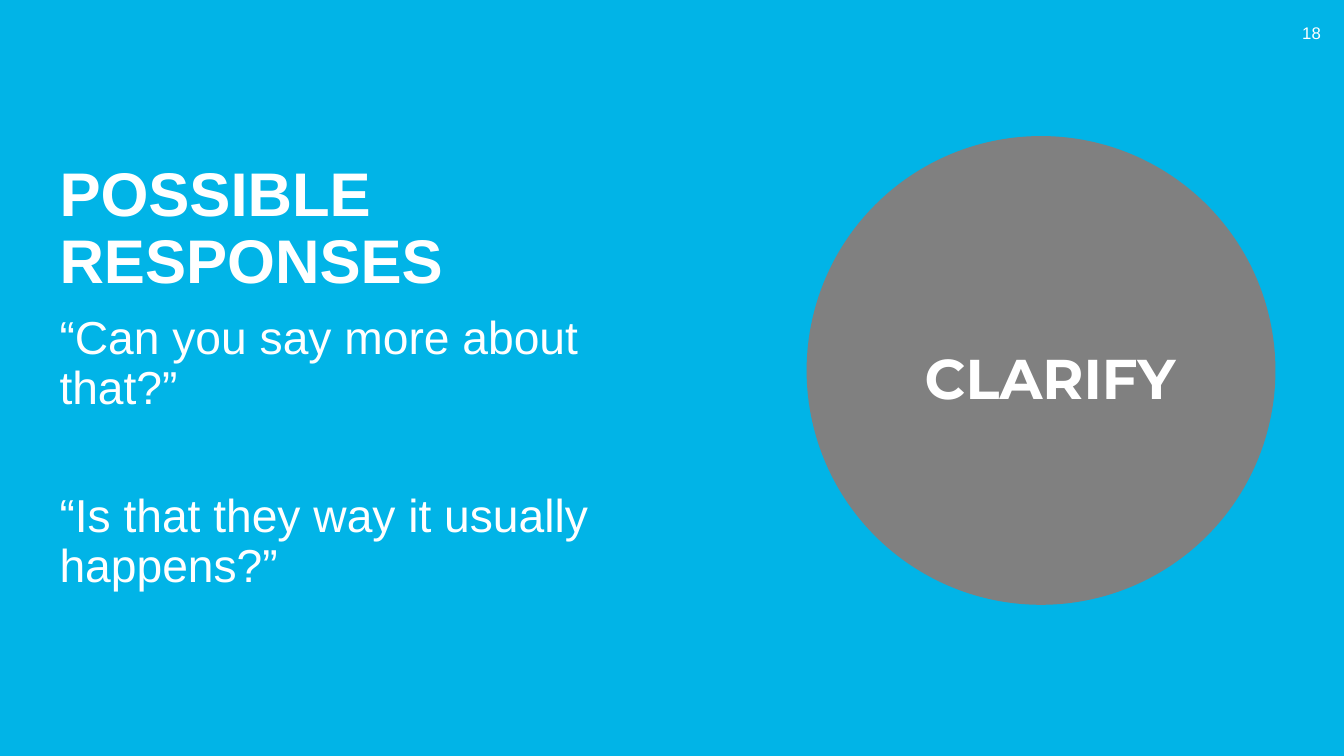
"""Build the "Possible responses" slide with its Clarify circle."""
from pptx import Presentation
from pptx.dml.color import RGBColor
from pptx.enum.shapes import MSO_SHAPE
from pptx.enum.text import MSO_ANCHOR, MSO_AUTO_SIZE, PP_ALIGN
from pptx.util import Inches, Pt

HEADING = ["POSSIBLE RESPONSES"]
RESPONSES = ["“Can you say more about that?”", "“Is that they way it usually happens?”"]
STRATEGY = ["CLARIFY"]
PAGE_NUMBER = ["18"]

SKY = RGBColor(0x01, 0xB4, 0xE7)
GRAY = RGBColor(0x80, 0x80, 0x80)
WHITE = RGBColor(0xFF, 0xFF, 0xFF)
RECTANGLE, OVAL = MSO_SHAPE.RECTANGLE, MSO_SHAPE.OVAL
LEFT, CENTER, RIGHT = PP_ALIGN.LEFT, PP_ALIGN.CENTER, PP_ALIGN.RIGHT
TOP, MIDDLE, BOTTOM = MSO_ANCHOR.TOP, MSO_ANCHOR.MIDDLE, MSO_ANCHOR.BOTTOM

SLIDE_W, SLIDE_H = 13.33, 7.5
MARGIN = 0.49
CIRCLE_LEFT, CIRCLE_TOP, CIRCLE_SIZE = 8, 1.35, 4.65
BACKDROP_BOX = (0, 0, SLIDE_W, SLIDE_H)
HEADING_BOX = (MARGIN, 1.75, 6.46, 1.24)
RESPONSES_BOX = (MARGIN, 3.07, 6.34, 3.04)
CIRCLE_BOX = (CIRCLE_LEFT, CIRCLE_TOP, CIRCLE_SIZE, CIRCLE_SIZE)
STRATEGY_BOX = (CIRCLE_LEFT + 0.09, 3.36, CIRCLE_SIZE, 0.77)
PAGE_BOX = (12.74, 0.13, 0.46, 0.4)


def write(holder, lines, box, size, font="Arial", bold=False, align=LEFT,
          anchor=TOP, leading=1.0, before=0, gap=0):
    """Place a text holder and fill it with formatted paragraphs."""
    holder.left, holder.top, holder.width, holder.height = map(Inches, box)
    frame = holder.text_frame
    frame.word_wrap = True
    frame.auto_size = MSO_AUTO_SIZE.NONE
    frame.vertical_anchor = anchor
    for index, line in enumerate(lines):
        paragraph = frame.add_paragraph() if index else frame.paragraphs[0]
        paragraph.alignment = align
        paragraph.line_spacing = leading
        paragraph.space_before = Pt(gap if index else before)
        run = paragraph.add_run()
        run.text = line
        run.font.name = font
        run.font.size = Pt(size)
        run.font.bold = bold
        run.font.color.rgb = WHITE


def add_plain(slide, outline, box, color):
    """Add a flat shape without an outline."""
    plain = slide.shapes.add_shape(outline, *map(Inches, box))
    plain.shadow.inherit = False
    plain.fill.solid()
    plain.fill.fore_color.rgb = color
    plain.line.fill.background()
    return plain


def main():
    """Compose and save the slide."""
    deck = Presentation()
    deck.slide_width, deck.slide_height = Inches(SLIDE_W), Inches(SLIDE_H)
    slide = deck.slides.add_slide(deck.slide_layouts[0])

    heading, responses = slide.placeholders
    backdrop = add_plain(slide, RECTANGLE, BACKDROP_BOX, SKY)
    heading.element.addprevious(backdrop.element)
    responses.element.addnext(heading.element)

    write(responses, RESPONSES, RESPONSES_BOX, 33, leading=0.9, before=10, gap=56)
    write(heading, HEADING, HEADING_BOX, 44, bold=True, anchor=BOTTOM,
          leading=0.9, before=10)

    page = slide.shapes.add_textbox(*map(Inches, PAGE_BOX))
    write(page, PAGE_NUMBER, PAGE_BOX, 12, align=RIGHT, anchor=MIDDLE)
    add_plain(slide, OVAL, CIRCLE_BOX, GRAY)
    strategy = slide.shapes.add_textbox(*map(Inches, STRATEGY_BOX))
    write(strategy, STRATEGY, STRATEGY_BOX, 40, font="Montserrat", bold=True, align=CENTER)

    deck.save("out.pptx")


if __name__ == "__main__":
    main()
